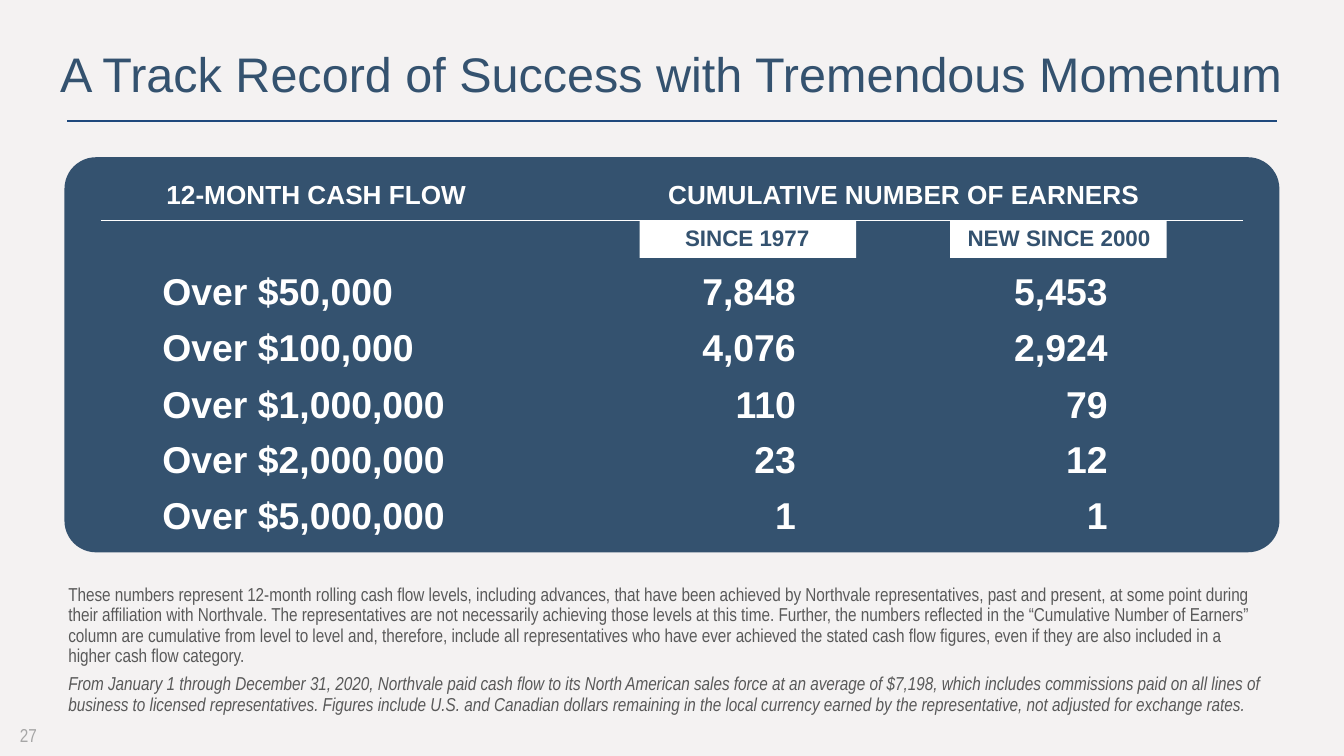
from dataclasses import dataclass

from lxml import etree
from pptx import Presentation
from pptx.dml.color import RGBColor
from pptx.enum.shapes import MSO_CONNECTOR, MSO_SHAPE
from pptx.enum.text import MSO_ANCHOR, PP_ALIGN
from pptx.oxml.ns import qn
from pptx.slide import Slide
from pptx.text.text import TextFrame
from pptx.util import Inches, Pt

LEFT, CENTER, RIGHT = PP_ALIGN.LEFT, PP_ALIGN.CENTER, PP_ALIGN.RIGHT
MIDDLE = MSO_ANCHOR.MIDDLE
RECT, ROUND = MSO_SHAPE.RECTANGLE, MSO_SHAPE.ROUNDED_RECTANGLE
STRAIGHT = MSO_CONNECTOR.STRAIGHT

NAVY, RULE, WHITE = "34526F", "1F497D", "FFFFFF"
PAPER, GRAY, PALE = "F4F2F2", "595959", "A6A6A6"
SANS, NARROW = "Arial", "Arial Narrow"

WIDTH = 10
ROW_TOP, ROW_STEP, ROW_H = 1.95, 5 / 12, 0.44
CHIP_TOP, CHIP_W, CHIP_H = 1.64, 1.61, 0.28


@dataclass
class Box:
    left: float
    top: float
    width: float
    height: float

    def place(self) -> tuple:
        return tuple(Inches(v) for v in (self.left, self.top, self.width, self.height))


@dataclass
class Style:
    size: float
    color: str = WHITE
    bold: bool = False
    italic: bool = False
    font: str = SANS


@dataclass
class Column:
    head: str
    chip: float
    label: float
    label_w: float
    left: float
    values: list


HEAD = Style(14, bold=True)
FIGURE = Style(20, bold=True)
CHIP = Style(12, NAVY, bold=True)
NOTE = Style(10, GRAY, font=NARROW)
FINE = Style(10, GRAY, italic=True, font=NARROW)

LEVELS = ["Over $50,000", "Over $100,000", "Over $1,000,000",
          "Over $2,000,000", "Over $5,000,000"]
COLUMNS = [
    Column("SINCE 1977", 4.76, 4.99, 1.14, 5.07, ["7,848", "4,076", "110", "23", "1"]),
    Column("NEW SINCE 2000", 7.07, 7.07, 1.62, 7.39, ["5,453", "2,924", "79", "12", "1"]),
]
NOTES = [
    ("These numbers represent 12-month rolling cash flow levels, including advances, "
     "that have been achieved by Northvale representatives, past and present, at some "
     "point during their affiliation with Northvale. The representatives are not "
     "necessarily achieving those levels at this time. Further, the numbers reflected "
     "in the “Cumulative Number of Earners” column are cumulative from level to level "
     "and, therefore, include all representatives who have ever achieved the stated "
     "cash flow figures, even if they are also included in a higher cash flow category.",
     NOTE),
    ("From January 1 through December 31, 2020, Northvale paid cash flow to its North "
     "American sales force at an average of $7,198, which includes commissions paid on "
     "all lines of business to licensed representatives. Figures include U.S. and "
     "Canadian dollars remaining in the local currency earned by the representative, "
     "not adjusted for exchange rates.", FINE),
]


def rgb(code: str) -> RGBColor:
    return RGBColor.from_string(code)


def write(frame: TextFrame, parts: list, align=LEFT, after=6, line=None) -> None:
    """Fill the frame with one paragraph for each (text, style) pair."""
    for i, (text, style) in enumerate(parts):
        para = frame.add_paragraph() if i else frame.paragraphs[0]
        para.alignment = align
        para.space_after = Pt(after)
        if line:
            para.line_spacing = Pt(line)
        run = para.add_run()
        run.text = text
        font = run.font
        font.name, font.size = style.font, Pt(style.size)
        font.bold, font.italic = style.bold, style.italic
        font.color.rgb = rgb(style.color)


def add_text(slide: Slide, box: Box, parts: list, align=LEFT, after=6, line=None) -> TextFrame:
    frame = slide.shapes.add_textbox(*box.place()).text_frame
    frame.word_wrap = True
    write(frame, parts, align, after, line)
    return frame


def add_block(slide: Slide, kind, box: Box, color: str):
    shape = slide.shapes.add_shape(kind, *box.place())
    shape.shadow.inherit = False
    shape.fill.solid()
    shape.fill.fore_color.rgb = rgb(color)
    shape.line.fill.background()
    return shape


def add_rule(slide: Slide, left: float, right: float, top: float, color: str) -> None:
    rule = slide.shapes.add_connector(
        STRAIGHT, Inches(left), Inches(top), Inches(right), Inches(top))
    rule.line.color.rgb = rgb(color)
    rule.line.width = Pt(0.75)
    etree.SubElement(rule._element.spPr, qn("a:effectLst"))


def add_rows(slide: Slide, left: float, width: float, texts: list, align) -> None:
    for i, text in enumerate(texts):
        box = Box(left, ROW_TOP + i * ROW_STEP, width, ROW_H)
        add_text(slide, box, [(text, FIGURE)], align)


def add_column(slide: Slide, col: Column) -> None:
    add_block(slide, RECT, Box(col.chip, CHIP_TOP, CHIP_W, CHIP_H), WHITE)
    box = Box(col.label, CHIP_TOP - 0.02, col.label_w, 0.3)
    add_text(slide, box, [(col.head, CHIP)], CENTER).word_wrap = False
    add_rows(slide, col.left, 0.95, col.values, RIGHT)


def set_title(slide: Slide, box: Box, text: str) -> None:
    title = slide.shapes.title
    title.left, title.top, title.width, title.height = box.place()
    title.text_frame.vertical_anchor = MIDDLE
    title.text_frame.word_wrap = True
    write(title.text_frame, [(text, Style(26, NAVY))], CENTER, after=0)


def main() -> None:
    deck = Presentation()
    deck.slide_width, deck.slide_height = Inches(WIDTH), Inches(WIDTH * 9 / 16)
    slide = deck.slides.add_slide(deck.slide_layouts[5])
    slide.background.fill.solid()
    slide.background.fill.fore_color.rgb = rgb(PAPER)

    set_title(slide, Box(0.33, 0.27, 9.34, 0.54),
              "A Track Record of Success with Tremendous Momentum")
    add_rule(slide, 0.5, 9.5, 0.9, RULE)

    panel = add_block(slide, ROUND, Box(0.48, 1.17, 9.04, 2.94), NAVY)
    panel.adjustments[0] = 0.08
    add_rule(slide, 0.75, 9.25, CHIP_TOP, WHITE)
    add_text(slide, Box(1.14, 1.28, 2.89, 0.34), [("12-MONTH CASH FLOW", HEAD)])
    add_text(slide, Box(4.76, 1.28, 3.93, 0.34),
             [("CUMULATIVE NUMBER OF EARNERS", HEAD)], CENTER)

    add_rows(slide, 1.11, 2.54, LEVELS, LEFT)
    for col in COLUMNS:
        add_column(slide, col)

    add_text(slide, Box(0.41, 4.3, 9.11, 1.08), NOTES, after=4, line=11)
    number = add_text(slide, Box(0.05, 5.32, 0.45, 0.3),
                      [("27", Style(10, PALE, font=NARROW))], after=0)
    number.vertical_anchor = MIDDLE
    deck.save("out.pptx")


if __name__ == "__main__":
    main()
